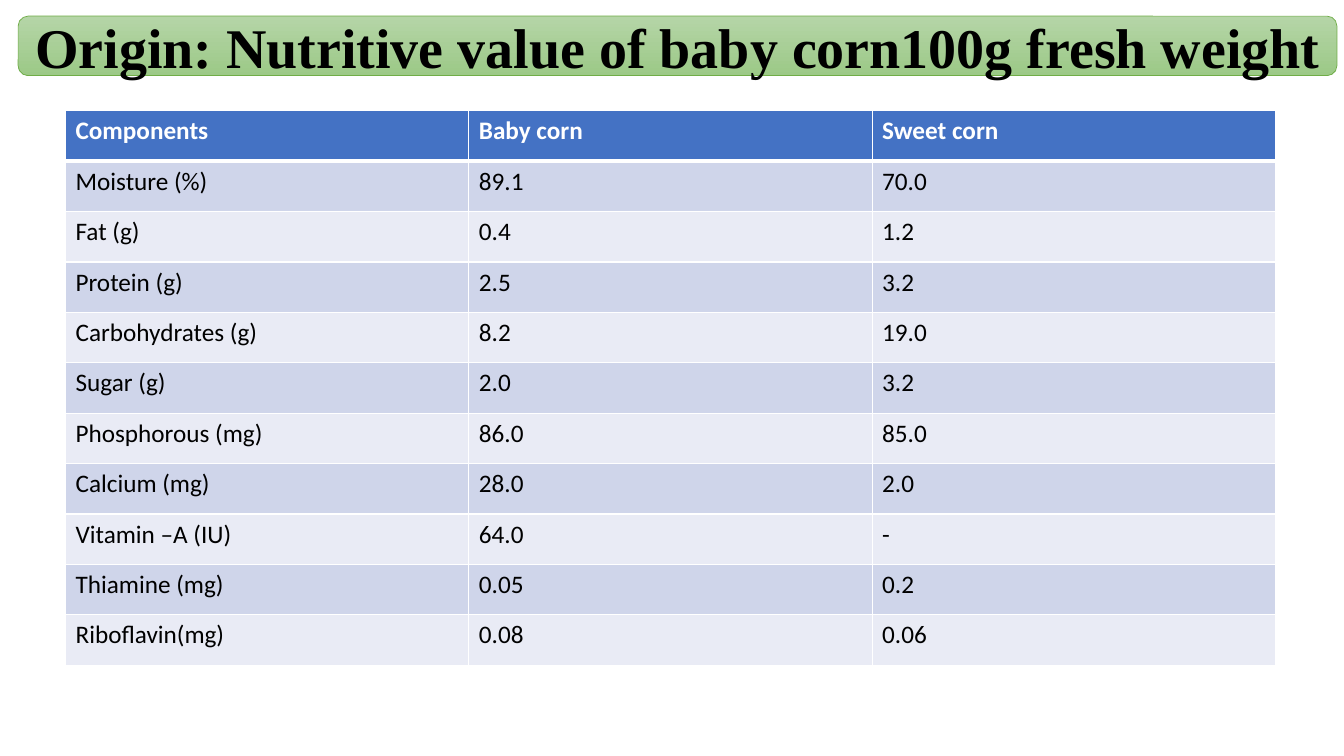
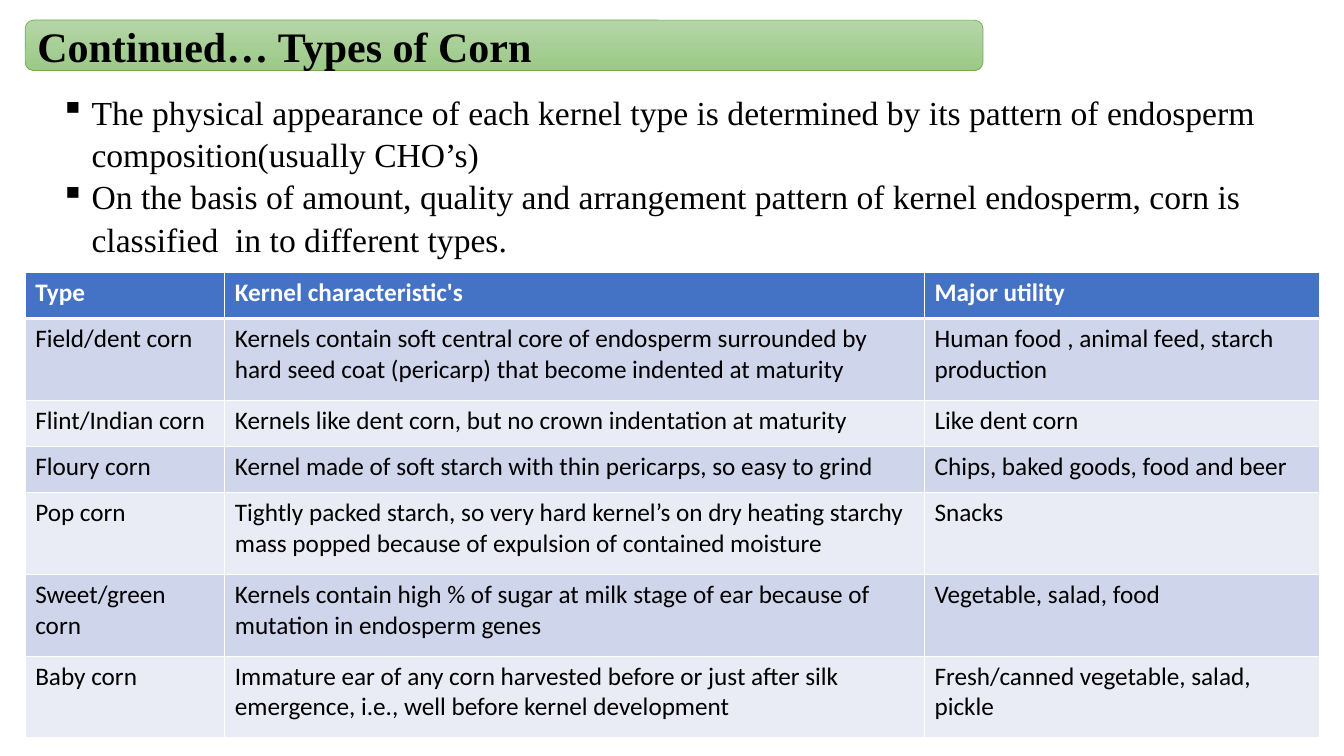
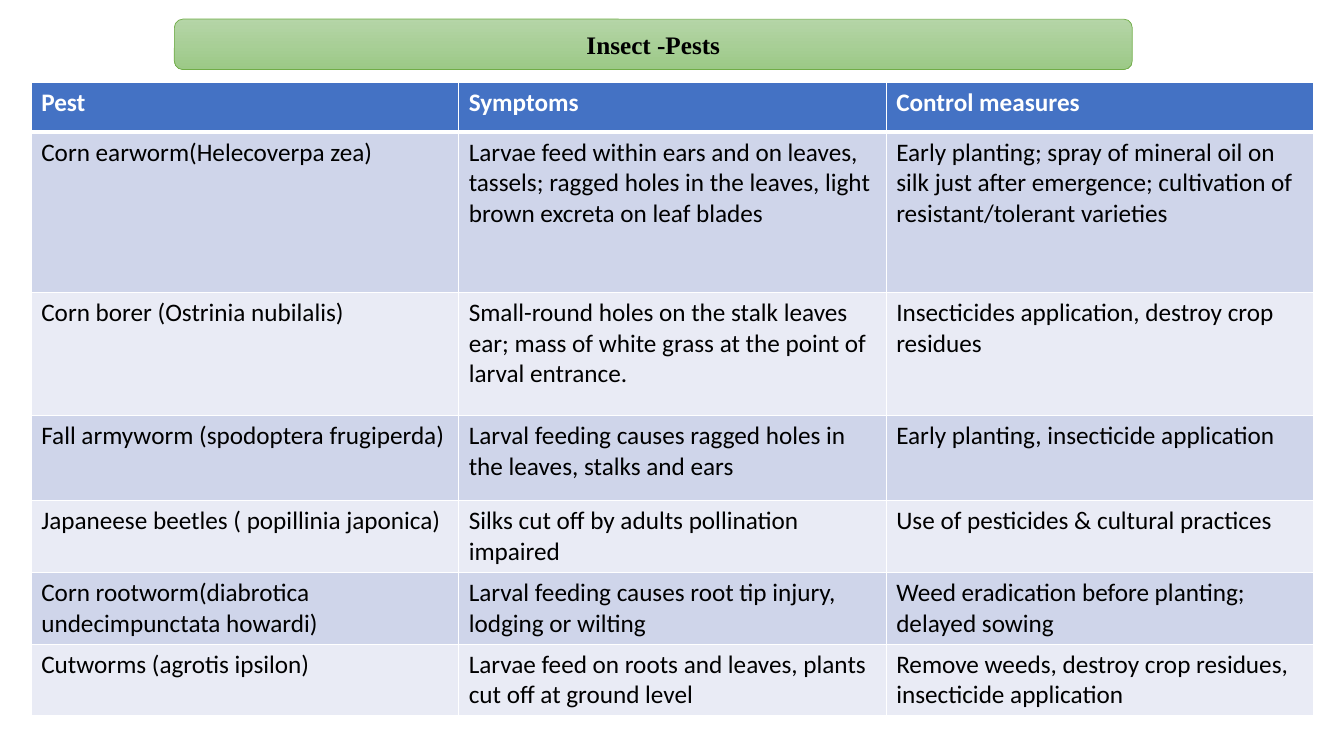
from lxml import etree
from pptx import Presentation
from pptx import util as u
from pptx.dml.color import RGBColor
from pptx.enum import shapes, text
from pptx.oxml import ns

PX = 9144
SERIF, SANS = "Times New Roman", "Calibri"
BLACK, WHITE = "000000", "FFFFFF"
BAND_TOP, BAND_BOTTOM, BAND_EDGE = "B5D5A7", "9CC987", "70AD47"
HEADER, STRIPES = "4472C4", ("CFD5EA", "E9EBF5")
TITLE_ONLY = 5

NUTRIENTS = [
    ("Components", "Baby corn", "Sweet corn"),
    ("Moisture (%)", "89.1", "70.0"),
    ("Fat (g)", "0.4", "1.2"),
    ("Protein (g)", "2.5", "3.2"),
    ("Carbohydrates (g)", "8.2", "19.0"),
    ("Sugar (g)", "2.0", "3.2"),
    ("Phosphorous (mg)", "86.0", "85.0"),
    ("Calcium (mg)", "28.0", "2.0"),
    ("Vitamin –A (IU)", "64.0", "-"),
    ("Thiamine (mg)", "0.05", "0.2"),
    ("Riboflavin(mg)", "0.08", "0.06"),
]
KERNEL_NOTES = [
    "The physical appearance of each kernel type is determined by its pattern of "
    "endosperm composition(usually CHO’s)",
    "On the basis of amount, quality and arrangement pattern of kernel endosperm, "
    "corn is classified  in to different types.",
]
CORN_TYPES = [
    ("Type", "Kernel characteristic's", "Major utility"),
    ("Field/dent corn",
     "Kernels contain soft central core of endosperm surrounded by hard seed coat "
     "(pericarp) that become indented at maturity",
     "Human food , animal feed, starch production"),
    ("Flint/Indian corn",
     "Kernels like dent corn, but no crown indentation at maturity",
     "Like dent corn"),
    ("Floury corn",
     "Kernel made of soft starch with thin pericarps, so easy to grind",
     "Chips, baked goods, food and beer"),
    ("Pop corn",
     "Tightly packed starch, so very hard kernel’s on dry heating starchy mass "
     "popped because of expulsion of contained moisture",
     "Snacks"),
    ("Sweet/green corn",
     "Kernels contain high % of sugar at milk stage of ear because of mutation in "
     "endosperm genes",
     "Vegetable, salad, food"),
    ("Baby corn",
     "Immature ear of any corn harvested before or just after silk emergence, i.e., "
     "well before kernel development",
     "Fresh/canned vegetable, salad, pickle"),
]
PESTS = [
    ("Pest", "Symptoms", "Control measures"),
    ("Corn earworm(Helecoverpa zea)",
     "Larvae feed within ears and on leaves, tassels; ragged holes in the leaves, "
     "light brown excreta on leaf blades",
     "Early planting; spray of mineral oil on silk just after emergence; cultivation "
     "of resistant/tolerant varieties"),
    ("Corn borer (Ostrinia nubilalis)",
     "Small-round holes on the stalk leaves ear; mass of white grass at the point of "
     "larval entrance.",
     "Insecticides application, destroy crop residues"),
    ("Fall armyworm (spodoptera frugiperda)",
     "Larval feeding causes ragged holes in the leaves, stalks and ears",
     "Early planting, insecticide application"),
    ("Japaneese beetles ( popillinia japonica)",
     "Silks cut off by adults pollination impaired",
     "Use of pesticides & cultural practices"),
    ("Corn rootworm(diabrotica undecimpunctata howardi)",
     "Larval feeding causes root tip injury, lodging or wilting",
     "Weed eradication before planting; delayed sowing"),
    ("Cutworms (agrotis ipsilon)",
     "Larvae feed on roots and leaves, plants cut off at ground level",
     "Remove weeds, destroy crop residues, insecticide application"),
]


def px(*lengths):
    """Turn px lengths into EMU."""
    return [u.Emu(length * PX) for length in lengths]


def rgb(value):
    """Turn a hex string into a colour."""
    return RGBColor.from_string(value)


def set_font(paragraph, name, size, color, bold=False):
    """Format all runs of a paragraph."""
    font = paragraph.font
    font.name, font.size, font.bold = name, u.Pt(size), bold
    font.color.rgb = rgb(color)


def add_title(slide, box, wording, size, align=text.PP_ALIGN.CENTER):
    """Draw the green band and set the title on it."""
    band = slide.shapes.add_shape(shapes.MSO_SHAPE.ROUNDED_RECTANGLE, *px(*box))
    band.shadow.inherit = False
    band.fill.gradient()
    band.fill.gradient_angle = 270
    for stop, color in zip(band.fill.gradient_stops, (BAND_TOP, BAND_BOTTOM)):
        stop.color.rgb = rgb(color)
    for position, stop in enumerate(band.fill.gradient_stops):
        stop.position = position
    band.line.color.rgb = rgb(BAND_EDGE)
    band.line.width = u.Pt(0.5)

    title = slide.shapes.title
    slide.shapes._spTree.append(title._element)
    title.left, title.top, title.width, title.height = px(*box)
    frame = title.text_frame
    frame.text = wording
    frame.word_wrap = True
    frame.auto_size = text.MSO_AUTO_SIZE.NONE
    frame.vertical_anchor = text.MSO_ANCHOR.MIDDLE
    frame.margin_left, frame.margin_right = px(12, 12)
    frame.margin_top, frame.margin_bottom = px(5, 5)
    frame.paragraphs[0].alignment = align
    set_font(frame.paragraphs[0], SERIF, size, BLACK, True)


def add_borders(cell, top, bottom):
    """Give a cell white borders."""
    properties = cell._tc.get_or_add_tcPr()
    widths = {"L": 1, "R": 1, "T": top, "B": bottom}
    for index, (side, width) in enumerate(widths.items()):
        line = etree.Element(ns.qn("a:ln" + side), w=str(u.Pt(width)))
        fill = etree.SubElement(line, ns.qn("a:solidFill"))
        etree.SubElement(fill, ns.qn("a:srgbClr"), val=WHITE)
        properties.insert(index, line)


def add_grid(slide, left, top, columns, heights, rows):
    """Build a table with a blue header and striped rows."""
    box = px(left, top, sum(columns), sum(heights))
    table = slide.shapes.add_table(len(rows), len(columns), *box).table
    for column, width in zip(table.columns, px(*columns)):
        column.width = width
    for row, height in zip(table.rows, px(*heights)):
        row.height = height
    for r, row in enumerate(rows):
        head = r == 0
        for c, wording in enumerate(row):
            cell = table.cell(r, c)
            cell.text = wording
            cell.fill.solid()
            cell.fill.fore_color.rgb = rgb(HEADER if head else STRIPES[(r - 1) % 2])
            add_borders(cell, 3 if r == 1 else 1, 3 if head else 1)
            set_font(cell.text_frame.paragraphs[0], SANS, 18,
                     WHITE if head else BLACK, head)


def add_bullets(slide, box, items):
    """Write a list with square bullets."""
    frame = slide.shapes.add_textbox(*px(*box)).text_frame
    frame.word_wrap = True
    for index, item in enumerate(items):
        paragraph = frame.add_paragraph() if index else frame.paragraphs[0]
        paragraph.text = item
        paragraph.line_spacing = 1.05
        properties = paragraph._p.get_or_add_pPr()
        indent, = px(31)
        properties.set("marL", str(indent))
        properties.set("indent", str(-indent))
        etree.SubElement(properties, ns.qn("a:buChar"), char="▪")
        set_font(paragraph, SERIF, 24, BLACK)


def nutrition_slide(slide):
    """Compare the nutrients of baby corn and sweet corn."""
    add_title(slide, (18, 16, 1308, 59),
              "Origin: Nutritive value of baby corn100g fresh weight", 40)
    add_grid(slide, 65, 110, [400] * 3, [50] * len(NUTRIENTS), NUTRIENTS)


def types_slide(slide):
    """List the types of corn."""
    add_title(slide, (25, 20, 950, 50), "Continued… Types of Corn", 30,
              text.PP_ALIGN.LEFT)
    add_bullets(slide, (50, 84, 1230, 172), KERNEL_NOTES)
    add_grid(slide, 25, 270, [198, 694, 392], [46, 81, 46, 46, 81, 81, 81],
             CORN_TYPES)


def pests_slide(slide):
    """List the insect pests."""
    add_title(slide, (173, 19, 950, 50), "Insect -Pests", 18)
    add_grid(slide, 31, 82, [424] * 3, [49, 159, 122, 85, 71, 71, 71], PESTS)


def main():
    """Build and save the deck."""
    deck = Presentation()
    deck.slide_width, deck.slide_height = px(1333, 750)
    for build in (nutrition_slide, types_slide, pests_slide):
        build(deck.slides.add_slide(deck.slide_layouts[TITLE_ONLY]))
    deck.save("out.pptx")


if __name__ == "__main__":
    main()
